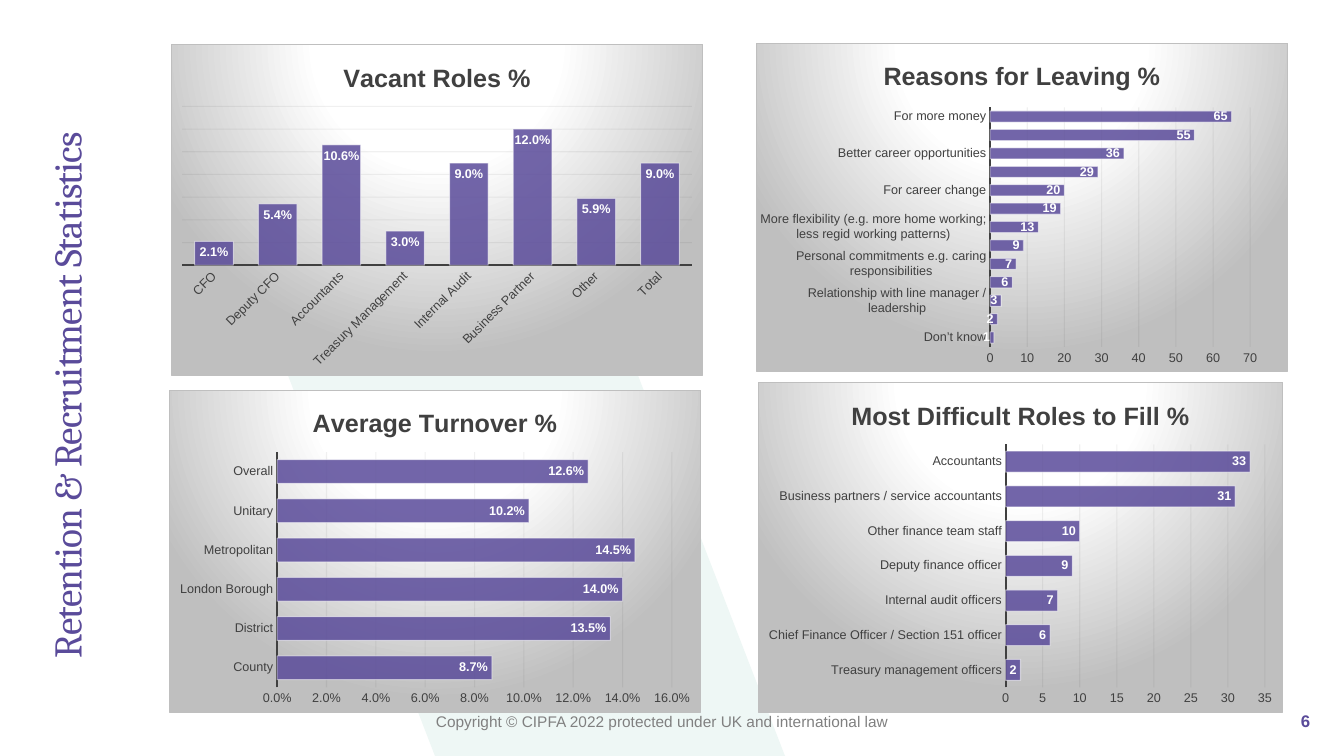
from lxml.etree import SubElement
from pptx import Presentation
from pptx.chart.data import CategoryChartData
from pptx.dml.color import RGBColor
from pptx.enum.chart import XL_CHART_TYPE, XL_LABEL_POSITION, XL_TICK_MARK
from pptx.enum.text import MSO_ANCHOR, PP_ALIGN
from pptx.oxml import parse_xml
from pptx.oxml.ns import nsdecls, qn
from pptx.util import Pt

PX = 914400 / 100.8
PURPLE = RGBColor(0x5A, 0x4B, 0x9A)
MINT = RGBColor(0xEE, 0xF7, 0xF5)
WHITE = RGBColor(0xFF, 0xFF, 0xFF)
DARK = RGBColor(0x40, 0x40, 0x40)
GREY = RGBColor(0x80, 0x80, 0x80)
GRID = RGBColor(0x0D, 0x0D, 0x0D)
BLACK = RGBColor(0, 0, 0)

CHART_FRAME = f"""<c:spPr {nsdecls('c', 'a')}>
<a:gradFill rotWithShape="1"><a:gsLst>
<a:gs pos="0"><a:srgbClr val="FFFFFF"/></a:gs>
<a:gs pos="39000"><a:srgbClr val="FFFFFF"/></a:gs>
<a:gs pos="100000"><a:srgbClr val="BFBFBF"/></a:gs>
</a:gsLst><a:path path="circle">
<a:fillToRect l="50000" t="-80000" r="50000" b="180000"/></a:path></a:gradFill>
<a:ln w="9525"><a:solidFill><a:srgbClr val="BFBFBF"/></a:solidFill></a:ln>
</c:spPr>"""

BAR = XL_CHART_TYPE.BAR_CLUSTERED
COLUMN = XL_CHART_TYPE.COLUMN_CLUSTERED
PERCENT = "0.0%"
CHARTS = [
    dict(title="Vacant Roles %", box=(171, 44, 532, 332), kind=COLUMN,
         fmt=PERCENT, top=0.14, step=0.02, hide_values=True, turn=-45,
         data=[("CFO", 0.021), ("Deputy CFO", 0.054), ("Accountants", 0.106),
               ("Treasury Management", 0.03), ("Internal Audit", 0.09),
               ("Business Partner", 0.12), ("Other", 0.059), ("Total", 0.09)]),
    dict(title="Reasons for Leaving %", box=(756, 43, 532, 329), top=70, step=10,
         plot=(0.44, 0.195, 0.49, 0.73),
         data=[("Don’t know", 1), ("", 2),
               ("Relationship with line manager / leadership", 3), ("", 6),
               ("Personal commitments e.g. caring responsibilities", 7), ("", 9),
               ("More flexibility (e.g. more home working; less regid working patterns)", 13),
               ("", 19), ("For career change", 20), ("", 29),
               ("Better career opportunities", 36), ("", 55), ("For more money", 65)]),
    dict(title="Most Difficult Roles to Fill %", box=(758, 382, 525, 331), top=35, step=5,
         data=[("Treasury management officers", 2),
               ("Chief Finance Officer / Section 151 officer", 6),
               ("Internal audit officers", 7), ("Deputy finance officer", 9),
               ("Other finance team staff", 10),
               ("Business partners / service accountants", 31), ("Accountants", 33)]),
    dict(title="Average Turnover %", box=(169, 390, 532, 323), fmt=PERCENT,
         top=0.16, step=0.02,
         data=[("County", 0.087), ("District", 0.135), ("London Borough", 0.14),
               ("Metropolitan", 0.145), ("Unitary", 0.102), ("Overall", 0.126)]),
]


def px(*lengths):
    return [round(n * PX) for n in lengths]


def set_all(target, **values):
    for name, value in values.items():
        setattr(target, name, value)


def set_font(font, size, color, bold=False, name="Arial"):
    set_all(font, size=Pt(size), bold=bold, name=name)
    font.color.rgb = color


def set_line(line, color, width):
    line.color.rgb = color
    line.width = Pt(width)


def set_alpha(fill_parent, percent):
    for clr in fill_parent.iter(qn("a:srgbClr")):
        SubElement(clr, qn("a:alpha"), val=str(percent * 1000))


class Slide:
    def __init__(self, prs):
        self.s = prs.slides.add_slide(prs.slide_layouts[6])

    def band(self, points, color):
        fb = self.s.shapes.build_freeform(*points[0], scale=PX)
        fb.add_line_segments(points[1:], close=True)
        sp = fb.convert_to_shape()
        sp.shadow.inherit = False
        sp.fill.solid()
        sp.fill.fore_color.rgb = color
        sp.line.fill.background()

    def text(self, box, text, font, anchor=MSO_ANCHOR.MIDDLE, align=PP_ALIGN.LEFT):
        sp = self.s.shapes.add_textbox(*px(*box))
        tf = sp.text_frame
        set_all(tf, word_wrap=True, vertical_anchor=anchor)
        p = tf.paragraphs[0]
        p.alignment = align
        r = p.add_run()
        r.text = text
        set_font(r.font, **font)
        return sp

    def side_title(self, box, text, font):
        sp = self.text(box, text, font, MSO_ANCHOR.BOTTOM)
        sp.rotation = 270
        sp.fill.solid()
        sp.fill.fore_color.rgb = WHITE
        tf = sp.text_frame
        set_all(tf, margin_left=0, margin_top=0, margin_right=0, margin_bottom=0)
        p = tf.paragraphs[0]
        p.line_spacing = 0.9
        p.runs[0].font._element.set("spc", "-60")

    def chart(self, title, box, data, top, step, kind=BAR, fmt="General",
              hide_values=False, turn=None, plot=None):
        names, values = zip(*data)
        cd = CategoryChartData(number_format=fmt)
        cd.categories = names
        cd.add_series(title, values)
        chart = self.s.shapes.add_chart(kind, *px(*box), cd).chart
        set_font(chart.font, 10, BLACK)
        chart.has_legend = False
        chart.has_title = True
        chart.chart_title.include_in_layout = False
        p = chart.chart_title.text_frame.paragraphs[0]
        r = p.add_run()
        r.text = title
        set_font(r.font, 18, DARK, True)
        chart.element.find(qn("c:chart")).addnext(parse_xml(CHART_FRAME))
        self.axes(chart, top, step, fmt, hide_values, turn)
        self.bars(chart.plots[0], fmt)
        if plot:
            self.place_plot(chart, plot)

    def axes(self, chart, top, step, fmt, hide_values, turn):
        cat, val = chart.category_axis, chart.value_axis
        for axis in (cat, val):
            set_all(axis, major_tick_mark=XL_TICK_MARK.NONE,
                    minor_tick_mark=XL_TICK_MARK.NONE)
            set_font(axis.tick_labels.font, 9, DARK)
        set_line(cat.format.line, DARK, 1.5)
        if turn:
            cat._element.find(".//" + qn("a:bodyPr")).set("rot", str(turn * 60000))
        set_all(val, minimum_scale=0, maximum_scale=top, major_unit=step,
                has_major_gridlines=True, visible=not hide_values)
        set_all(val.tick_labels, number_format=fmt, number_format_is_linked=False)
        val.format.line.fill.background()
        set_line(val.major_gridlines.format.line, GRID, 0.75)
        set_alpha(val._element.find(qn("c:majorGridlines")), 5)

    def bars(self, plot, fmt):
        set_all(plot, gap_width=65, vary_by_categories=False, has_data_labels=True)
        labels = plot.data_labels
        set_all(labels, show_value=True, position=XL_LABEL_POSITION.INSIDE_END,
                number_format=fmt, number_format_is_linked=False)
        set_font(labels.font, 9, WHITE, True)
        ser = plot.series[0]
        ser.format.fill.solid()
        ser.format.fill.fore_color.rgb = PURPLE
        set_line(ser.format.line, WHITE, 0.75)
        sp_pr = ser._element.find(qn("c:spPr"))
        set_alpha(sp_pr.find(qn("a:solidFill")), 85)
        set_alpha(sp_pr.find(qn("a:ln")), 50)

    def place_plot(self, chart, plot):
        area = chart.element.find(".//" + qn("c:plotArea"))
        for old in area.findall(qn("c:layout")):
            area.remove(old)
        layout = parse_xml(f"<c:layout {nsdecls('c')}><c:manualLayout/></c:layout>")
        values = dict(layoutTarget="inner", xMode="edge", yMode="edge")
        values.update(zip("xywh", plot))
        for name, value in values.items():
            SubElement(layout[0], qn("c:" + name), val=str(value))
        area.insert(0, layout)


def main():
    prs = Presentation()
    prs.slide_width, prs.slide_height = px(1344, 756)
    slide = Slide(prs)
    slide.band([(532, 101), (182, 101), (435, 756), (785, 756)], MINT)
    slide.text((426, 701, 651, 40),
               "Copyright © CIPFA 2022 protected under UK and international law",
               dict(size=11, color=GREY))
    slide.text((1152, 701, 168, 40), "6",
               dict(size=12, color=PURPLE, bold=True), align=PP_ALIGN.RIGHT)
    slide.side_title((-235, 333, 600, 50), "Retention & Recruitment Statistics",
                     dict(size=28, color=PURPLE, name="Cambria"))
    for chart in CHARTS:
        slide.chart(**chart)
    prs.save("out.pptx")


if __name__ == "__main__":
    main()
